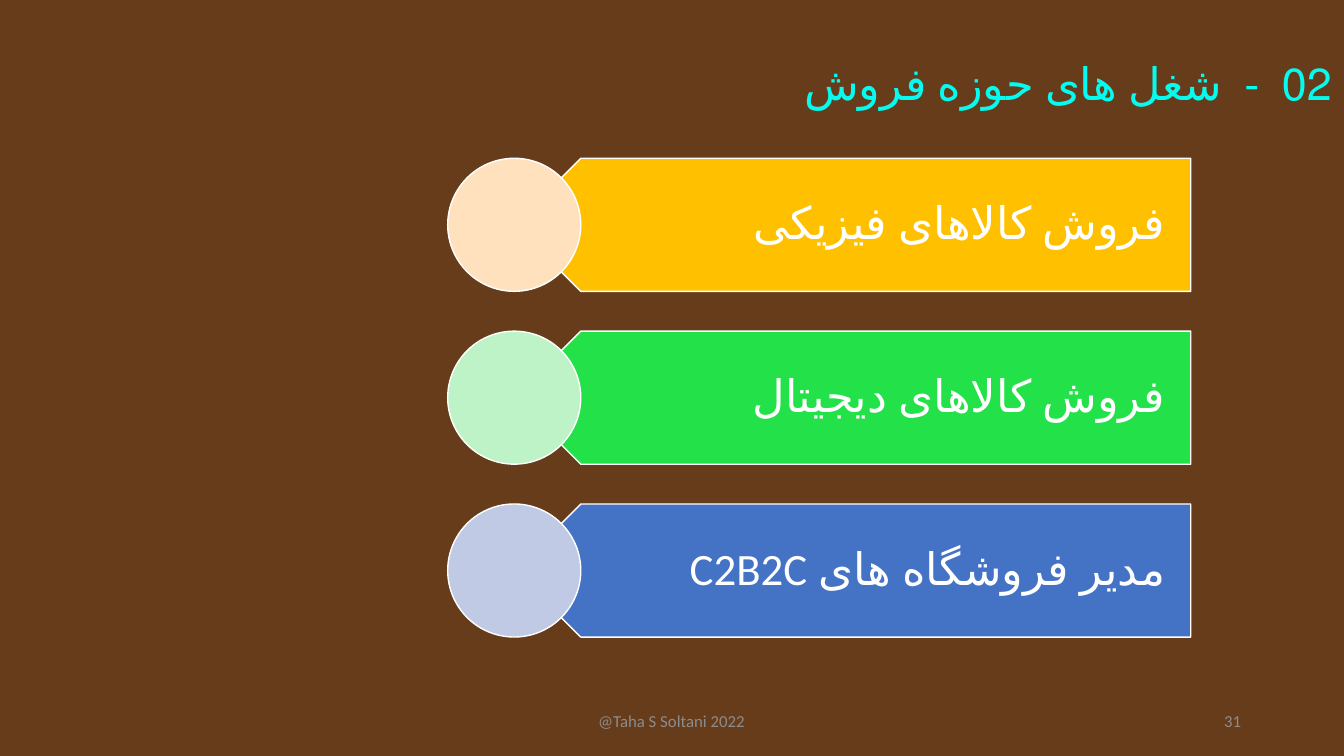
from dataclasses import dataclass

from pptx import Presentation
from pptx.dml.color import RGBColor
from pptx.enum.lang import MSO_LANGUAGE_ID
from pptx.enum.shapes import MSO_SHAPE
from pptx.enum.text import MSO_ANCHOR, MSO_AUTO_SIZE, PP_ALIGN
from pptx.util import Inches, Pt


@dataclass(frozen=True)
class Theme:
    """Colours, font and type sizes of the slide."""
    font: str = "Calibri"
    background: str = "673C1B"
    title: str = "04FCF0"
    light: str = "FFFFFF"
    footer: str = "8C8C8C"
    large: int = 32
    small: int = 12


THEME = Theme()
JOBS = [
    ("فروش کالاهای فیزیکی", "FFC000", "FFE2BD"),
    ("فروش کالاهای دیجیتال", "23E148", "BDF3C6"),
    ("مدیر فروشگاه های C2B2C", "4472C4", "C1CAE4"),
]


def write(box, text, size, color, align, anchor=MSO_ANCHOR.MIDDLE, rtl=False):
    """Put one formatted line of text into a box."""
    frame = box.text_frame
    frame.text = text
    frame.word_wrap = True
    frame.auto_size = MSO_AUTO_SIZE.NONE
    frame.vertical_anchor = anchor
    para = frame.paragraphs[0]
    para.alignment = align
    if rtl:
        para.line_spacing = 0.9
        para._p.get_or_add_pPr().set("rtl", "1")
    for span in para.runs:
        span.font.name = THEME.font
        span.font.size = Pt(size)
        span.font.color.rgb = RGBColor.from_string(color)
        if rtl:
            span.font.language_id = MSO_LANGUAGE_ID.FARSI


def add_filled(shapes, kind, left, top, width, height, color):
    """Add a flat shape with a thin light outline."""
    shape = shapes.add_shape(kind, Inches(left), Inches(top), Inches(width), Inches(height))
    shape.shadow.inherit = False
    shape.fill.solid()
    shape.fill.fore_color.rgb = RGBColor.from_string(color)
    shape.line.color.rgb = RGBColor.from_string(THEME.light)
    shape.line.width = Pt(1)
    return shape


def add_title(page, left, top, width, height):
    """Place the right-to-left heading."""
    title = page.shapes.title
    title.left, title.top = Inches(left), Inches(top)
    title.width, title.height = Inches(width), Inches(height)
    write(title, "02  -  شغل های حوزه فروش", THEME.large, THEME.title,
          PP_ALIGN.RIGHT, MSO_ANCHOR.TOP, rtl=True)


def add_job(page, left, top, width, height, job):
    """Draw one job: a left-pointing bar, its label and a disc on the tip."""
    label, bar_color, disc_color = job
    shapes = page.shapes.add_group_shape().shapes
    bar_left = left + height / 2
    bar = add_filled(shapes, MSO_SHAPE.PENTAGON, bar_left, top,
                     width - height / 2, height, bar_color)
    bar.rotation = 180
    inset = height / 4
    box = shapes.add_textbox(Inches(bar_left + inset), Inches(top),
                             Inches(width - height / 2 - inset), Inches(height))
    write(box, label, THEME.large, THEME.light, PP_ALIGN.RIGHT, rtl=True)
    frame = box.text_frame
    frame.margin_left, frame.margin_right = Inches(0.58), Inches(0.25)
    frame.margin_top = frame.margin_bottom = Inches(0.13)
    add_filled(shapes, MSO_SHAPE.OVAL, left, top, height, height, disc_color)


def add_job_list(page, left, top, width, height, row_height):
    """Spread the jobs evenly over the height of the list."""
    pitch = (height - row_height) / (len(JOBS) - 1)
    for index, job in enumerate(JOBS):
        add_job(page, left, top + index * pitch, width, row_height, job)


def add_footer(page, left, top, width, height):
    """Place the centred footer and the page number at the right."""
    number_width = 3
    parts = [
        ("@Taha S Soltani 2022", left, 4.5, PP_ALIGN.CENTER),
        ("31", left + width - number_width, number_width, PP_ALIGN.RIGHT),
    ]
    for text, part_left, part_width, align in parts:
        box = page.shapes.add_textbox(Inches(part_left), Inches(top),
                                      Inches(part_width), Inches(height))
        write(box, text, THEME.small, THEME.footer, align)


def main():
    """Build the slide and save the deck."""
    deck = Presentation()
    deck.slide_width, deck.slide_height = Inches(13.33), Inches(7.5)
    page = deck.slides.add_slide(deck.slide_layouts[5])
    page.background.fill.solid()
    page.background.fill.fore_color.rgb = RGBColor.from_string(THEME.background)
    add_footer(page, 4.41, 6.95, 8, 0.4)
    add_title(page, 4.41, 0.56, 8.9, 1.4)
    add_job_list(page, 4.44, 1.57, 7.37, 4.75, 1.32)
    deck.save("out.pptx")


if __name__ == "__main__":
    main()
